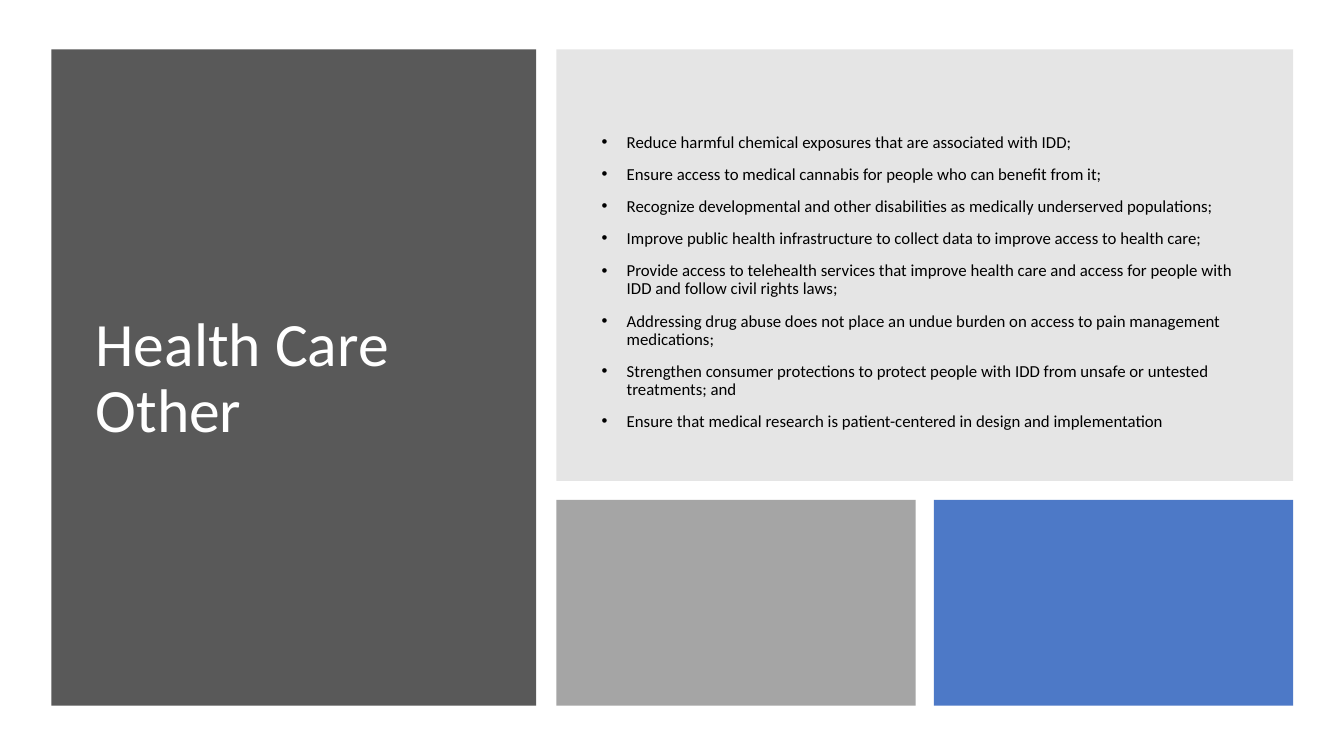
from lxml import etree
from pptx import Presentation
from pptx.dml.color import RGBColor
from pptx.enum.shapes import MSO_SHAPE
from pptx.enum.text import MSO_ANCHOR
from pptx.oxml.ns import qn
from pptx.util import Pt

RECTANGLE = MSO_SHAPE.RECTANGLE
MIDDLE = MSO_ANCHOR.MIDDLE
FONT = "Calibri"

# Panel layout, in points
TOP, BOTTOM = 35.3, 504
TITLE_LEFT, TITLE_WIDTH = 36.7, 346.3
GOALS_LEFT, GOALS_WIDTH, GOALS_HEIGHT = 397.4, 526.3, 308.2
TILE_TOP, TILE_GAP = 357.1, 13

HEALTH_GOALS = [
    "Reduce harmful chemical exposures that are associated with IDD;",
    "Ensure access to medical cannabis for people who can benefit from it;",
    "Recognize developmental and other disabilities as medically underserved populations;",
    "Improve public health infrastructure to collect data to improve access to health care;",
    "Provide access to telehealth services that improve health care and access for people "
    "with IDD and follow civil rights laws;",
    "Addressing drug abuse does not place an undue burden on access to pain management "
    "medications;",
    "Strengthen consumer protections to protect people with IDD from unsafe or untested "
    "treatments; and",
    "Ensure that medical research is patient-centered in design and implementation",
]


def color(hex_value):
    return RGBColor.from_string(hex_value)


def add_panel(slide, left, top, width, height, fill, opacity=100):
    panel = slide.shapes.add_shape(RECTANGLE, Pt(left), Pt(top), Pt(width), Pt(height))
    panel.shadow.inherit = False
    panel.line.fill.background()
    panel.fill.solid()
    panel.fill.fore_color.rgb = color(fill)
    if opacity < 100:
        fill_color = panel._element.spPr.find(qn("a:solidFill"))[0]
        etree.SubElement(fill_color, qn("a:alpha"), val=str(opacity * 1000))


def add_text(slide, left, top, width, height, lines, size, text_color):
    box = slide.shapes.add_textbox(Pt(left), Pt(top), Pt(width), Pt(height))
    frame = box.text_frame
    frame.word_wrap = True
    frame.vertical_anchor = MIDDLE
    frame.text = "\n".join(lines)
    for paragraph in frame.paragraphs:
        paragraph.line_spacing = 0.9
        font = paragraph.runs[0].font
        font.name = FONT
        font.size = Pt(size)
        font.color.rgb = color(text_color)
    return frame


def add_bullets(frame, indent, space_before):
    for paragraph in frame.paragraphs:
        paragraph.space_before = Pt(space_before)
        properties = paragraph._p.get_or_add_pPr()
        properties.set("marL", str(Pt(indent)))
        properties.set("indent", str(-Pt(indent)))
        etree.SubElement(properties, qn("a:buFont"), typeface="Arial")
        etree.SubElement(properties, qn("a:buChar"), char="•")


def main():
    presentation = Presentation()
    presentation.slide_width, presentation.slide_height = Pt(960), Pt(540)
    slide = presentation.slides.add_slide(presentation.slide_layouts[6])

    # Title panel
    add_panel(slide, TITLE_LEFT, TOP, TITLE_WIDTH, BOTTOM - TOP, "595959")
    add_text(slide, 61.2, 59.8, 295.9, 422.6, ["Health Care Other"], 44, "FFFFFF")

    # Goals panel, with its list set slightly below the middle
    add_panel(slide, GOALS_LEFT, TOP, GOALS_WIDTH, GOALS_HEIGHT, "808080", opacity=20)
    goals = add_text(slide, 422.6, 63.4, 476.6, 253.4, HEALTH_GOALS, 12, "000000")
    goals.margin_top = Pt(26.8)
    add_bullets(goals, indent=18, space_before=10)

    # Two equal tiles under the goals
    tile_width = (GOALS_WIDTH - TILE_GAP) / 2
    for column, (fill, opacity) in enumerate([("A5A5A5", 100), ("4472C4", 95)]):
        tile_left = GOALS_LEFT + column * (tile_width + TILE_GAP)
        add_panel(slide, tile_left, TILE_TOP, tile_width, BOTTOM - TILE_TOP, fill, opacity)

    presentation.save("out.pptx")


if __name__ == "__main__":
    main()
